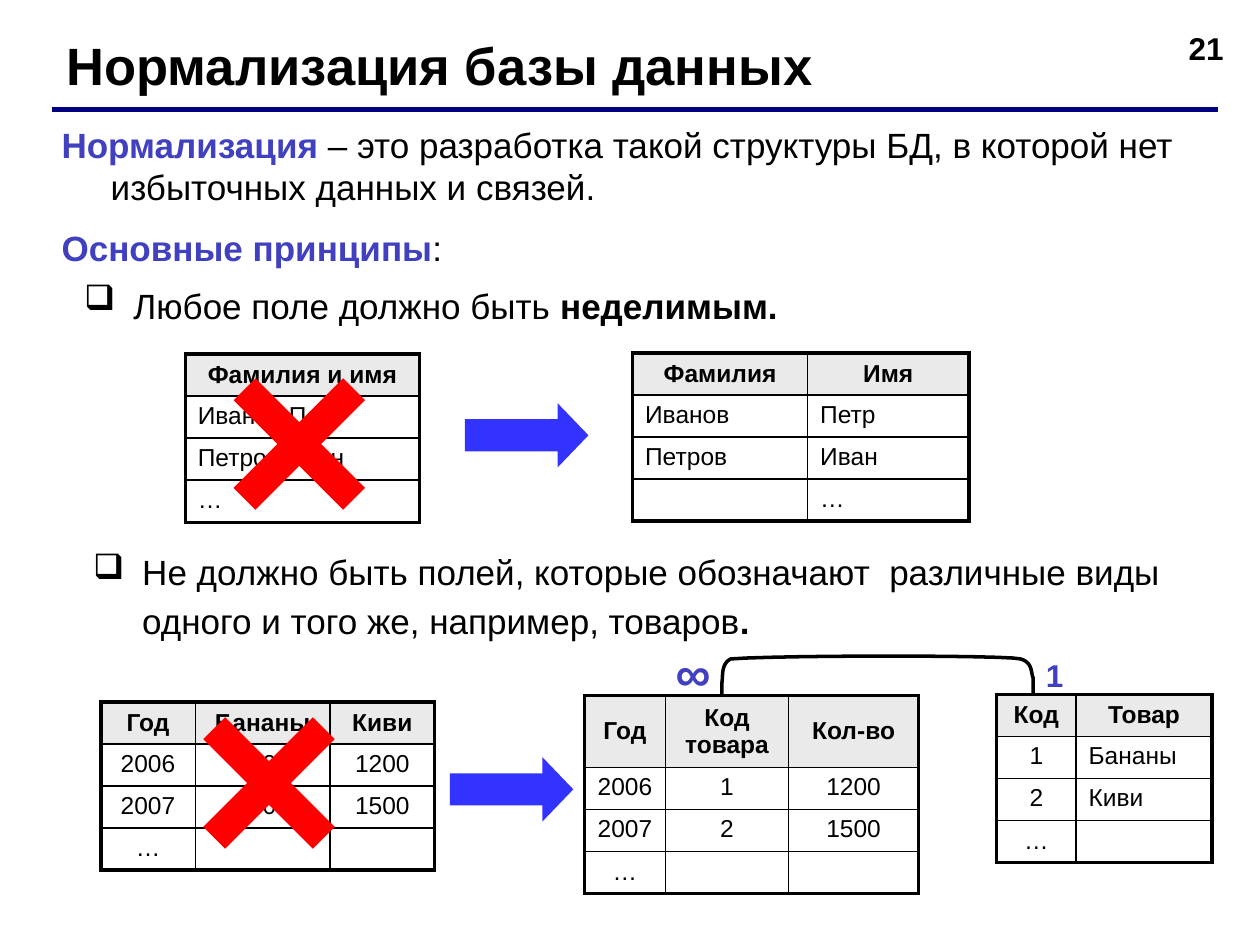
from lxml.etree import SubElement
from pptx import Presentation
from pptx.dml.color import RGBColor
from pptx.enum.shapes import MSO_CONNECTOR, MSO_SHAPE
from pptx.enum.text import MSO_ANCHOR, PP_ALIGN
from pptx.oxml.ns import qn
from pptx.util import Inches, Pt

THEME = {
    "font": "Arial",
    "ink": "000000", "accent": "4040C0", "rule": "000080",
    "header": "EAEAEA", "arrow": "3333FF", "cross": "FF0000",
    "title": 30, "body": 20, "tail": 24, "cell": 14, "number": 18, "infinity": 28,
    "outer": 2.25, "inner": 1, "link": 2,
}
LEFT, CENTER, RIGHT = PP_ALIGN.LEFT, PP_ALIGN.CENTER, PP_ALIGN.RIGHT

# Runs are (text, size key, colour key, bold).
TITLE = [[("Нормализация базы данных", "title", "ink", True)]]
SLIDE_NUMBER = [[("21", "number", "ink", True)]]
DEFINITION = [
    [("Нормализация ", "body", "accent", True),
     ("– это разработка такой структуры БД, в которой нет избыточных данных и связей.",
      "body", "ink", False)],
    [("Основные принципы", "body", "accent", True), (":", "body", "ink", False)],
]
INDIVISIBLE = [[
    ("Любое поле должно быть ", "body", "ink", False),
    ("неделимым. ", "body", "ink", True), (" ", "tail", "ink", False),
]]
NO_VARIANTS = [[
    ("Не должно быть полей, которые обозначают  различные виды одного и того же, "
     "например, товаров", "body", "ink", False),
    (". ", "body", "ink", True), (" ", "tail", "ink", False),
]]

# Each table: position, column widths, header height, alignment of body columns, rows.
ROW_HEIGHT = 0.33
TABLES = [
    ((1.47, 2.81), [1.86], ROW_HEIGHT, [LEFT],
     [["Фамилия и имя"], ["Иванов Петр"], ["Петров Иван"], ["…"]]),
    ((5.02, 2.8), [1.39, 1.28], ROW_HEIGHT, [LEFT, LEFT],
     [["Фамилия", "Имя"], ["Иванов", "Петр"], ["Петров", "Иван"], ["", "…"]]),
    ((0.8, 5.57), [0.75, 1.07, 0.83], ROW_HEIGHT, [CENTER] * 3,
     [["Год", "Бананы", "Киви"], ["2006", "3200", "1200"],
      ["2007", "5600", "1500"], ["…", "", ""]]),
    ((4.64, 5.52), [0.64, 0.98, 1.03], 0.57, [CENTER] * 3,
     [["Год", "Код товара", "Кол-во"], ["2006", "1", "1200"],
      ["2007", "2", "1500"], ["…", "", ""]]),
    ((7.91, 5.51), [0.63, 1.08], ROW_HEIGHT, [CENTER, LEFT],
     [["Код", "Товар"], ["1", "Бананы"], ["2", "Киви"], ["…", ""]]),
]
ARROWS = [(3.69, 3.2), (3.57, 6.01)]
CROSSES = [(1.76, 2.91), (1.52, 5.6)]

# The relation starts at a point; two points make a line, four a Bezier curve.
RELATION = [
    [(5.73, 5.52), (5.73, 5.42)],
    [(5.73, 5.42), (5.74, 5.37), (5.72, 5.27), (5.8, 5.23)],
    [(5.8, 5.23), (6.2, 5.2), (7.99, 5.2), (8.1, 5.23)],
    [(8.1, 5.23), (8.2, 5.26), (8.18, 5.34), (8.2, 5.38)],
    [(8.2, 5.38), (8.2, 5.52)],
]
MULTIPLICITIES = [((5.33, 5.18), "∞", "infinity"), ((8.2, 5.21), "1", "number")]


def color(key):
    return RGBColor.from_string(THEME[key])


def style(font, size, ink, bold):
    font.name, font.size, font.bold = THEME["font"], Pt(THEME[size]), bold
    font.color.rgb = color(ink)


def add_text(slide, box, paragraphs, align=LEFT, hanging=0, bullet=None):
    frame = slide.shapes.add_textbox(*map(Inches, box)).text_frame
    frame.word_wrap = True
    for index, runs in enumerate(paragraphs):
        paragraph = frame.add_paragraph() if index else frame.paragraphs[0]
        paragraph.alignment = align
        if index:
            paragraph.space_before = Pt(THEME["body"] / 2 + 1)
        if hanging:
            properties = paragraph._p.get_or_add_pPr()
            properties.set("marL", str(Inches(hanging)))
            properties.set("indent", str(Inches(-hanging)))
            if bullet:
                SubElement(properties, qn("a:buChar")).set("char", bullet)
        for text, size, ink, bold in runs:
            run = paragraph.add_run()
            run.text = text
            style(run.font, size, ink, bold)
    return frame


def set_borders(cell, outer_sides):
    """Draw all four sides, before the fill as the schema demands."""
    properties = cell._tc.get_or_add_tcPr()
    for position, side in enumerate("LRTB"):
        width = THEME["outer" if side in outer_sides else "inner"]
        line = properties.makeelement(qn(f"a:ln{side}"), {"w": str(Pt(width))})
        properties.insert(position, line)
        fill = SubElement(line, qn("a:solidFill"))
        SubElement(fill, qn("a:srgbClr")).set("val", THEME["ink"])


def add_grid(slide, corner, widths, header_height, aligns, rows):
    heights = [header_height] + [ROW_HEIGHT] * (len(rows) - 1)
    size = (sum(widths), sum(heights))
    table = slide.shapes.add_table(
        len(rows), len(widths), *map(Inches, corner + size)).table
    table.horz_banding = False
    for column, width in zip(table.columns, widths):
        column.width = Inches(width)
    for r, texts in enumerate(rows):
        table.rows[r].height = Inches(heights[r])
        for c, text in enumerate(texts):
            cell = table.cell(r, c)
            paragraph = cell.text_frame.paragraphs[0]
            paragraph.text = text
            paragraph.alignment = aligns[c] if r else CENTER
            for run in paragraph.runs:
                style(run.font, "cell", "ink", r == 0)
            if not text:
                end = SubElement(paragraph._p, qn("a:endParaRPr"))
                end.set("sz", str(THEME["cell"] * 100))
            if r == 0:
                cell.vertical_anchor = MSO_ANCHOR.MIDDLE
                cell.fill.solid()
                cell.fill.fore_color.rgb = color("header")
            else:
                cell.fill.background()
            edges = {"L": c == 0, "R": c == len(widths) - 1,
                     "T": r == 0, "B": r == len(rows) - 1}
            set_borders(cell, [side for side, outer in edges.items() if outer])


def add_mark(slide, kind, corner, size, fill, adjustments, rotation=0):
    mark = slide.shapes.add_shape(kind, *map(Inches, corner + size))
    mark.shadow.inherit = False
    mark.fill.solid()
    mark.fill.fore_color.rgb = color(fill)
    mark.line.fill.background()
    mark.rotation = rotation
    for index, value in enumerate(adjustments):
        mark.adjustments[index] = value


def bezier(points, steps=12):
    """Sample a Bezier curve of any degree, leaving out its start."""
    for step in range(1, steps + 1):
        t, level = step / steps, points
        while len(level) > 1:
            level = [tuple(a + (b - a) * t for a, b in zip(p, q))
                     for p, q in zip(level, level[1:])]
        yield level[0]


def add_relation(slide):
    builder = slide.shapes.build_freeform(*map(Inches, RELATION[0][0]))
    for segment in RELATION:
        points = bezier(segment, 1 if len(segment) == 2 else 12)
        builder.add_line_segments([tuple(map(Inches, p)) for p in points], close=False)
    relation = builder.convert_to_shape()
    relation.shadow.inherit = False
    relation.fill.background()
    relation.line.color.rgb = color("ink")
    relation.line.width = Pt(THEME["link"])


def main():
    deck = Presentation()
    deck.slide_width, deck.slide_height = Inches(10), Inches(7.5)
    slide = deck.slides.add_slide(deck.slide_layouts[6])

    add_text(slide, (7.48, 0.18, 2.33, 0.52), SLIDE_NUMBER, RIGHT)
    rule = slide.shapes.add_connector(
        MSO_CONNECTOR.STRAIGHT, *map(Inches, (0.41, 0.87, 9.67, 0.87)))
    rule.line.color.rgb, rule.line.width = color("rule"), Pt(3)
    SubElement(rule._element.spPr, qn("a:effectLst"))
    add_text(slide, (0.43, 0.21, 8.9, 0.6), TITLE)
    add_text(slide, (0.39, 0.93, 9.22, 1.26), DEFINITION, hanging=0.39)
    add_text(slide, (0.57, 2.15, 5.79, 0.48), INDIVISIBLE, hanging=0.39, bullet="❑")
    add_text(slide, (0.64, 4.32, 8.98, 0.78), NO_VARIANTS, hanging=0.39, bullet="❑")

    for table in TABLES:
        add_grid(slide, *table)
    for corner in ARROWS:
        add_mark(slide, MSO_SHAPE.RIGHT_ARROW, corner, (0.98, 0.51), "arrow", [0.5, 0.48])
    for corner in CROSSES:
        add_mark(slide, MSO_SHAPE.CROSS, corner, (1.23, 1.23), "cross", [0.4], 45)

    add_relation(slide)
    for corner, sign, size in MULTIPLICITIES:
        frame = add_text(slide, corner + (0.34, 0.3), [[(sign, size, "accent", True)]], CENTER)
        frame.word_wrap = False
        frame.vertical_anchor = MSO_ANCHOR.MIDDLE
        frame.margin_left = frame.margin_right = frame.margin_top = frame.margin_bottom = 0
    deck.save("out.pptx")


if __name__ == "__main__":
    main()
